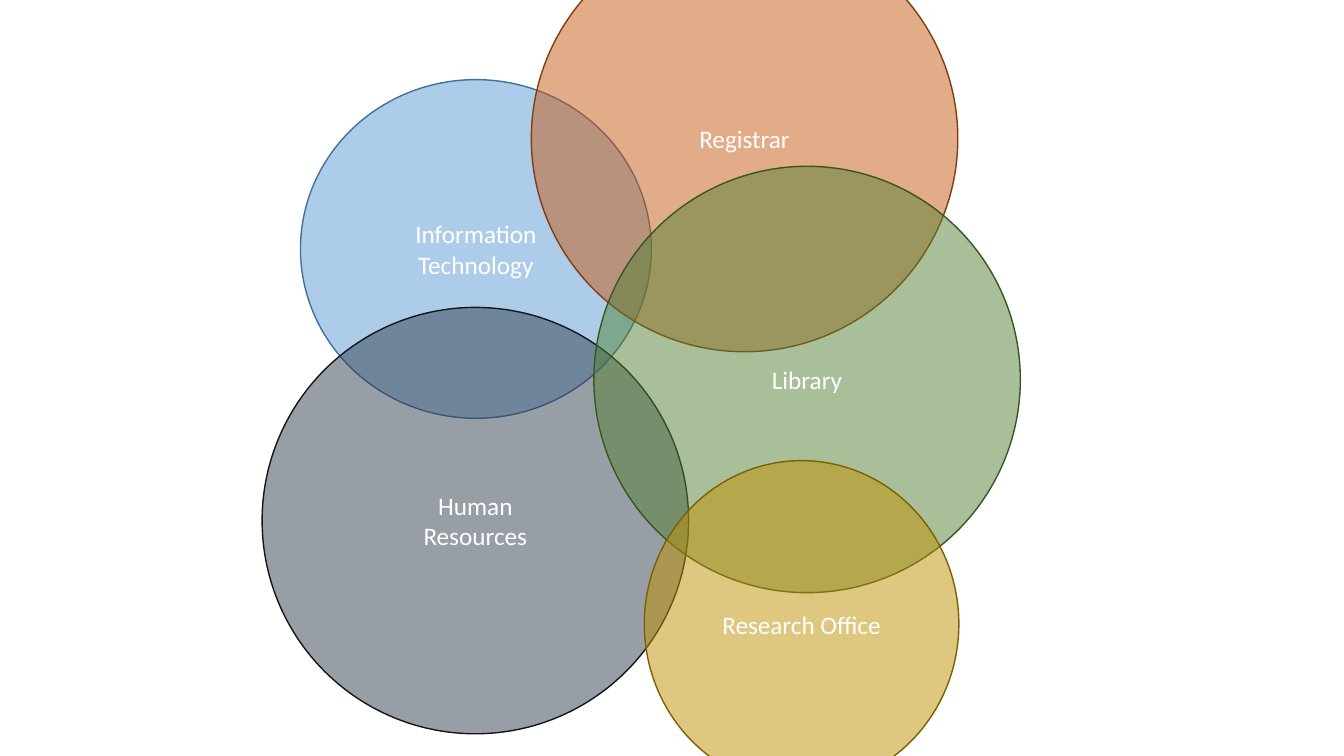
from dataclasses import dataclass

from lxml import etree
from pptx import Presentation
from pptx.dml.color import RGBColor
from pptx.enum.shapes import MSO_SHAPE
from pptx.enum.text import MSO_ANCHOR, PP_ALIGN
from pptx.oxml.ns import qn
from pptx.util import Inches, Pt

OVAL = MSO_SHAPE.OVAL
CENTER = PP_ALIGN.CENTER
MIDDLE = MSO_ANCHOR.MIDDLE
BLANK_LAYOUT = 6


@dataclass(frozen=True)
class Theme:
    font: str = "Calibri"
    label_size: int = 18
    label: str = "FFFFFF"
    outline_width: float = 1
    opacity: int = 50
    technology: tuple = ("5B9BD5", "42719B")
    resources: tuple = ("323F4F", "171616")
    registrar: tuple = ("C55A11", "833C0B")
    library: tuple = ("548135", "385623")
    research: tuple = ("BF9000", "7F6000")


THEME = Theme()
LARGE = 4.23

# Label lines, (fill, outline), offset from the diagram's corner, size
DEPARTMENTS = [
    (["Information", "Technology"], THEME.technology, (0.38, 1.53), (3.48, 3.36)),
    (["Human", "Resources"], THEME.resources, (0, 3.79), (LARGE, LARGE)),
    (["Registrar"], THEME.registrar, (2.67, 0), (LARGE, LARGE)),
    (["Library"], THEME.library, (3.29, 2.39), (LARGE, LARGE)),
    (["Research Office"], THEME.research, (3.79, 5.31), (3.12, 3.24)),
]


def write_text(frame, lines, *, size=THEME.label_size, color=THEME.label,
               font=THEME.font, align=CENTER, anchor=MIDDLE):
    frame.word_wrap = True
    frame.vertical_anchor = anchor
    for index, line in enumerate(lines):
        paragraph = frame.paragraphs[0] if index == 0 else frame.add_paragraph()
        paragraph.alignment = align
        run = paragraph.add_run()
        run.text = line
        run.font.name = font
        run.font.size = Pt(size)
        run.font.color.rgb = RGBColor.from_string(color)


def set_opacity(shape, percent):
    color = shape.fill._xPr.find(qn("a:solidFill"))[0]
    etree.SubElement(color, qn("a:alpha")).set("val", str(percent * 1000))


def add_department(slide, lines, colors, left, top, width, height):
    fill, outline = colors
    circle = slide.shapes.add_shape(
        OVAL, Inches(left), Inches(top), Inches(width), Inches(height))
    circle.shadow.inherit = False
    circle.fill.solid()
    circle.fill.fore_color.rgb = RGBColor.from_string(fill)
    set_opacity(circle, THEME.opacity)
    circle.line.color.rgb = RGBColor.from_string(outline)
    circle.line.width = Pt(THEME.outline_width)
    write_text(circle.text_frame, lines)


def add_venn_diagram(slide, left, top):
    """Draw the overlapping departments, back to front."""
    for lines, colors, (dx, dy), (width, height) in DEPARTMENTS:
        add_department(slide, lines, colors, left + dx, top + dy, width, height)


def main():
    presentation = Presentation()
    presentation.slide_width = Inches(13.33)
    presentation.slide_height = Inches(7.5)
    slide = presentation.slides.add_slide(presentation.slide_layouts[BLANK_LAYOUT])
    add_venn_diagram(slide, left=2.6, top=-0.74)
    presentation.save("out.pptx")


if __name__ == "__main__":
    main()
